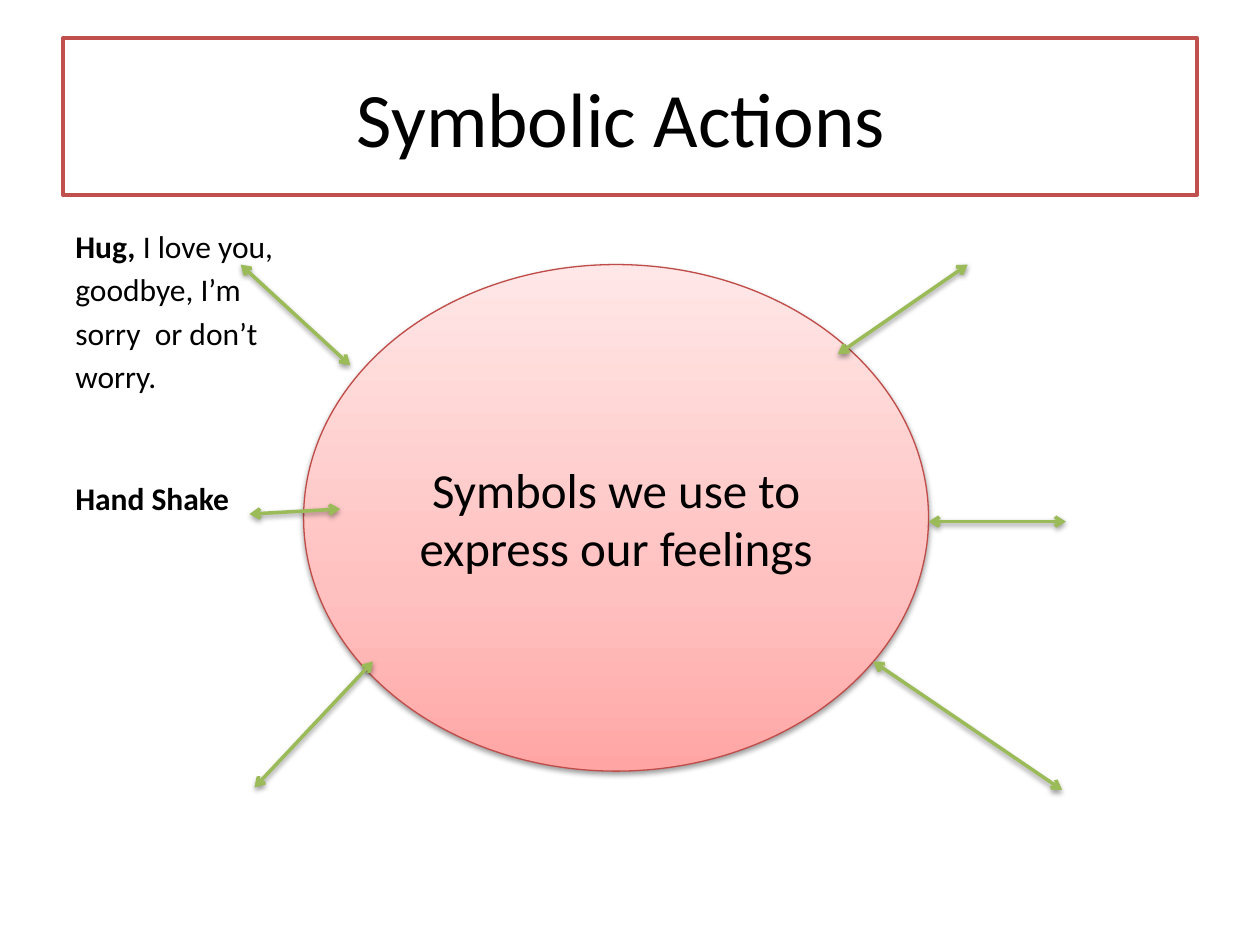
from lxml import etree
from pptx import Presentation
from pptx.dml.color import RGBColor
from pptx.enum.shapes import MSO_CONNECTOR, MSO_SHAPE
from pptx.enum.text import MSO_ANCHOR, PP_ALIGN
from pptx.oxml import parse_xml
from pptx.oxml.ns import nsdecls, qn
from pptx.util import Inches, Pt

BLACK = RGBColor(0x00, 0x00, 0x00)
WHITE = RGBColor(0xFF, 0xFF, 0xFF)
RED = RGBColor(0xC0, 0x50, 0x4D)
DARK_RED = RGBColor(0xBF, 0x4C, 0x48)
GREEN = RGBColor(0x9B, 0xBB, 0x59)
PINK_STOPS = [
    (0, RGBColor(0xFF, 0xA6, 0xA5)),
    (35, RGBColor(0xFF, 0xC0, 0xBF)),
    (100, RGBColor(0xFF, 0xE7, 0xE7)),
]

TITLE = "Symbolic Actions "
CENTRE = "Symbols we use to express our feelings"
# Each paragraph: space before in points, then (text, bold) runs
ACTIONS = [
    (3.2, [("Hug, ", True), ("I love you,", False)]),
    (3.2, [("goodbye, I’m", False)]),
    (3.2, [("sorry  or don’t", False)]),
    (3.2, [("worry.", False)]),
    (48.2, [("Hand Shake", True)]),
]
# Inner end at the ellipse, outer end
ARROWS = [
    ((2.78, 2.9), (1.91, 2.1)),
    ((2.96, 5.25), (2.02, 6.25)),
    ((6.65, 2.81), (7.68, 2.1)),
    ((6.93, 5.25), (8.43, 6.27)),
    ((7.37, 4.14), (8.46, 4.14)),
    ((2.7, 4.04), (1.98, 4.08)),
]


def add_text(p, text, size=18, bold=False, align=PP_ALIGN.LEFT):
    p.alignment = align
    r = p.add_run()
    r.text = text
    r.font.name = "Calibri"
    r.font.size = Pt(size)
    r.font.bold = bold
    r.font.color.rgb = BLACK


def add_panel(slide, kind, box, text, size, line_color, line_width):
    """Outlined shape with one centred line of thought in it."""
    sp = slide.shapes.add_shape(kind, *map(Inches, box))
    sp.shadow.inherit = False
    sp.fill.solid()
    sp.fill.fore_color.rgb = WHITE
    sp.line.color.rgb = line_color
    sp.line.width = Pt(line_width)
    tf = sp.text_frame
    tf.word_wrap = True
    tf.vertical_anchor = MSO_ANCHOR.MIDDLE
    add_text(tf.paragraphs[0], text, size=size, align=PP_ALIGN.CENTER)
    return sp


def set_gradient(sp, stops, angle):
    stop_xml = "".join(
        f'<a:gs pos="{pos * 1000}"><a:srgbClr val="{color}"/></a:gs>'
        for pos, color in stops)
    grad = parse_xml(
        f'<a:gradFill {nsdecls("a")} rotWithShape="1"><a:gsLst>{stop_xml}</a:gsLst>'
        f'<a:lin ang="{angle * 60000}" scaled="0"/></a:gradFill>')
    spPr = sp._element.spPr
    spPr.replace(spPr.find(qn("a:solidFill")), grad)


def set_shadow(sp):
    spPr = sp._element.spPr
    for old in spPr.findall(qn("a:effectLst")):
        spPr.remove(old)
    spPr.append(parse_xml(
        f'<a:effectLst {nsdecls("a")}><a:outerShdw blurRad="{Pt(3.1)}" '
        f'dist="{Pt(1.6)}" dir="5400000" rotWithShape="0">'
        '<a:srgbClr val="000000"><a:alpha val="38000"/></a:srgbClr>'
        '</a:outerShdw></a:effectLst>'))


def add_arrow(slide, start, end):
    line = slide.shapes.add_connector(
        MSO_CONNECTOR.STRAIGHT, *map(Inches, start + end))
    line.line.color.rgb = GREEN
    line.line.width = Pt(2)
    ln = line._element.spPr.find(qn("a:ln"))
    for tag in ("a:headEnd", "a:tailEnd"):
        etree.SubElement(ln, qn(tag), type="arrow")
    set_shadow(line)


def main():
    prs = Presentation()
    prs.slide_width, prs.slide_height = Inches(10), Inches(7.5)
    slide = prs.slides.add_slide(prs.slide_layouts[6])

    add_panel(slide, MSO_SHAPE.RECTANGLE, (0.5, 0.3, 9, 1.25), TITLE, 44, RED, 2)

    body = slide.shapes.add_textbox(*map(Inches, (0.5, 1.75, 9, 4.95)))
    tf = body.text_frame
    tf.word_wrap = True
    for i, (space, runs) in enumerate(ACTIONS):
        p = tf.add_paragraph() if i else tf.paragraphs[0]
        p.space_before = Pt(space)
        for text, bold in runs:
            add_text(p, text, bold=bold)

    ellipse = add_panel(slide, MSO_SHAPE.OVAL, (2.41, 2.1, 4.96, 4.02),
                        CENTRE, 28, DARK_RED, 0.75)
    set_gradient(ellipse, PINK_STOPS, 270)
    set_shadow(ellipse)

    for start, end in ARROWS:
        add_arrow(slide, start, end)

    prs.save("out.pptx")


if __name__ == "__main__":
    main()
